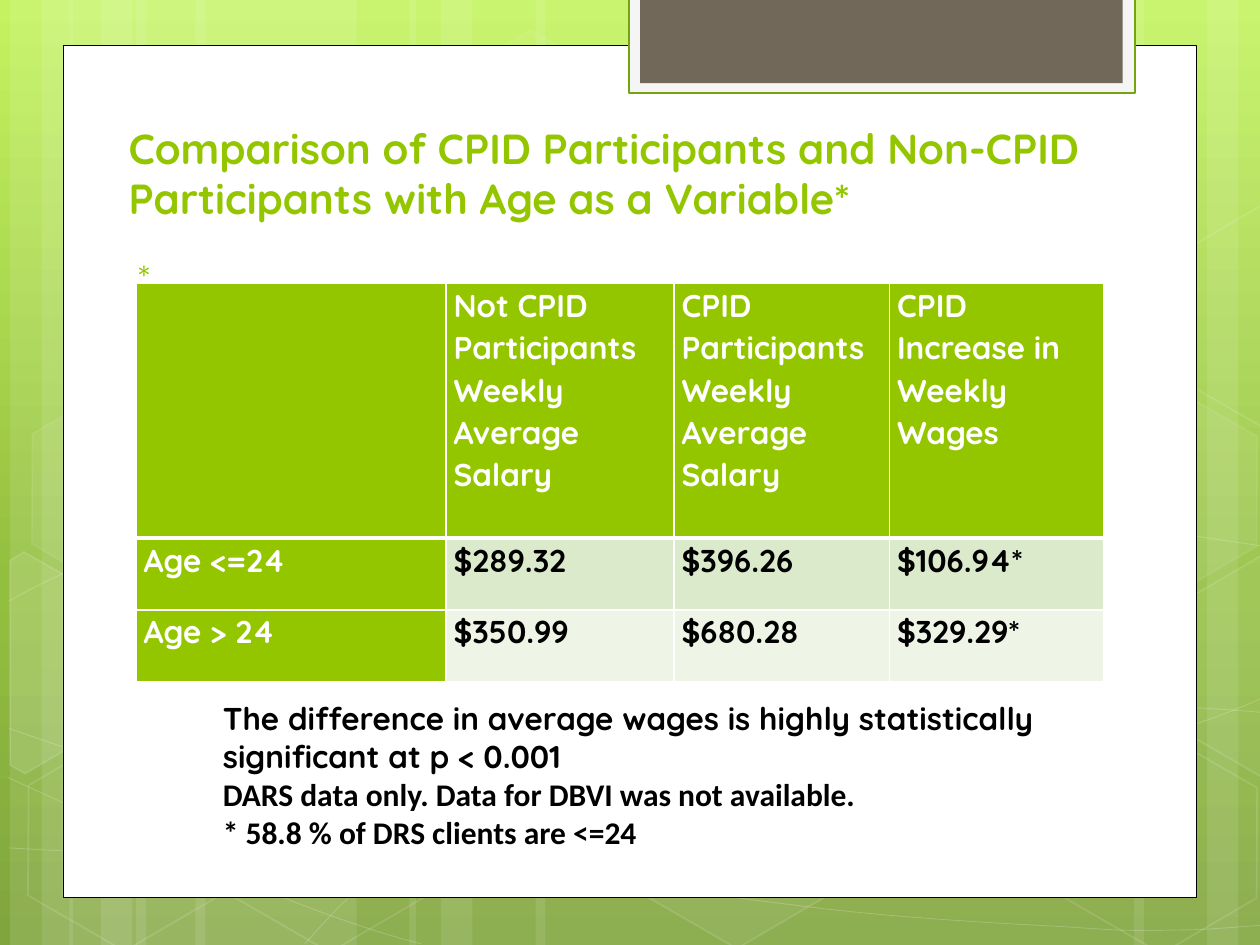
import math
from dataclasses import dataclass
from typing import Optional

import pptx
import pptx.dml.color
import pptx.enum.shapes
import pptx.enum.text
import pptx.oxml
import pptx.oxml.ns
import pptx.util
from pptx.util import Inches

COLORS = {
    "white": "FFFFFF", "black": "000000", "accent": "94C600",
    "tab_edge": "74A510", "tab_back": "F5F5F5", "tab": "71685A",
    "band1": "DCEACC", "band2": "EEF5E7",
    "bg_top": "C3F35F", "bg_mid": "93BF3F", "bg_bottom": "81A53E",
}
NS = pptx.oxml.ns.nsdecls("a")
RECT = pptx.enum.shapes.MSO_SHAPE.RECTANGLE
HEXAGON = pptx.enum.shapes.MSO_SHAPE.HEXAGON
TILT = 30


@dataclass
class Style:
    fill: Optional[str] = None
    fill_alpha: int = 100
    line: Optional[str] = None
    width: float = 1
    line_alpha: int = 100


@dataclass
class Hexagon:
    left: float
    top: float
    fill_alpha: int
    line_alpha: int


@dataclass
class Panel:
    left: float
    top: float
    width: float
    height: float
    style: Style


STRIPES = [(1.08, 1.75), (0.08, 0.5), (0.33, 0.83), (1.55, 1.75), (0.55, 0.5), (0.8, 0.83),
           (7.33, 1.75), (9.58, 0.5), (9, 0.83), (4.25, 3.08), (3.25, 0.5), (3.5, 0.83)]
CURVES = [
    [(0.07, 6.73), (0.61, 6.76), (1.15, 6.79), (1.9, 6.78), (2.65, 6.77), (3.58, 6.75), (4.58, 6.65),
     (5.58, 6.55), (7, 6.36), (7.92, 6.17), (8.83, 5.98), (9.77, 5.68), (10.07, 5.51)],
    [(0.07, 4.77), (0.36, 4.61), (0.65, 4.46), (1.21, 4.31), (1.78, 4.16), (2.59, 3.94), (3.47, 3.87),
     (4.36, 3.8), (5.44, 3.79), (6.54, 3.87), (7.64, 3.95), (9.47, 4.26), (10.07, 4.34)],
    [(0.06, 6.17), (1.27, 6.72), (2.47, 7.27), (3.34, 7.49)],
    [(0.07, 5.78), (0.38, 5.89), (0.7, 6), (1.28, 6.16), (1.86, 6.31), (2.73, 6.56), (3.57, 6.73),
     (4.4, 6.9), (5.45, 7.08), (6.28, 7.18), (7.11, 7.29), (8, 7.33), (8.53, 7.36),
     (9.05, 7.4), (9.19, 7.38), (9.45, 7.38), (9.71, 7.37), (9.89, 7.35), (10.07, 7.34)],
    [(2.42, 7.49), (2.6, 7.29), (2.78, 7.09), (3.02, 6.91), (3.26, 6.73), (3.6, 6.53), (3.88, 6.39),
     (4.16, 6.25), (4.33, 6.19), (4.7, 6.09), (5.06, 5.99), (5.73, 5.85), (6.08, 5.78),
     (6.44, 5.71), (6.49, 5.71), (6.8, 5.69), (7.11, 5.66), (7.6, 5.63), (7.94, 5.62),
     (8.29, 5.61), (8.86, 5.62), (8.86, 5.62), (9.08, 5.62), (9.31, 5.62), (9.53, 5.62),
     (9.71, 5.63), (9.88, 5.64), (10.06, 5.66)],
]
HEXAGONS = [
    Hexagon(3.34, 0.36, 4, 8), Hexagon(4.97, 5.89, 6, 12), Hexagon(0.11, 5.91, 0, 12),
    Hexagon(0.14, 3.12, 7, 8), Hexagon(1.74, 5.92, 0, 12), Hexagon(7.53, 4.53, 10, 12),
    Hexagon(8.34, 5.93, 0, 12), Hexagon(8.34, 3.14, 7, 8),
]
LEFT_CUT = [(0.08, 4.45), (0.19, 4.38), (0.96, 4.82), (0.95, 5.7), (0.2, 6.14), (0.08, 6.07)]
RIGHT_CUT = [(9.26, 4.85), (10.01, 4.41), (10.09, 4.46), (10.09, 6.13), (10.02, 6.17), (9.26, 5.73)]
CUT_HEXAGONS = [(LEFT_CUT, 10), (RIGHT_CUT, 4), ([(x, y - 2.78) for x, y in RIGHT_CUT], 0)]
PANELS = [
    Panel(0.5, 0.36, 9, 6.76, Style("white", line="black", width=0.5)),
    Panel(4.99, -0.02, 4.02, 0.76, Style("tab_back", line="tab_edge", width=1.25)),
    Panel(5.08, -0.02, 3.83, 0.68, Style("tab")),
]
TABLE = [
    ["", "Not CPID Participants\nWeekly Average Salary", "CPID Participants\nWeekly Average Salary",
     "CPID Increase in Weekly Wages"],
    ["Age <=24", "$289.32", "$396.26", "$106.94*"],
    ["Age > 24", "$350.99", "$680.28", "$329.29*"],
]


def rgb(name: str) -> pptx.dml.color.RGBColor:
    return pptx.dml.color.RGBColor.from_string(COLORS[name])


def paint(fill, color: Optional[str], alpha: int = 100) -> None:
    if color is None or alpha == 0:
        fill.background()
        return
    fill.solid()
    fill.fore_color.rgb = rgb(color)
    if alpha < 100:
        clr = fill._xPr.xpath("./a:solidFill/a:srgbClr")[0]
        clr.append(pptx.oxml.parse_xml(f'<a:alpha {NS} val="{alpha * 1000}"/>'))


def apply_style(sp, style: Style) -> None:
    sp.shadow.inherit = False
    paint(sp.fill, style.fill, style.fill_alpha)
    paint(sp.line.fill, style.line, style.line_alpha)
    if style.line:
        sp.line.width = pptx.util.Pt(style.width)


def add_preset(slide, kind, left: float, top: float, width: float, height: float, style: Style):
    sp = slide.shapes.add_shape(kind, Inches(left), Inches(top), Inches(width), Inches(height))
    apply_style(sp, style)
    return sp


def add_outline(slide, points: list, closed: bool, style: Style):
    pts = [(Inches(x), Inches(y)) for x, y in points]
    fb = slide.shapes.build_freeform(*pts[0])
    fb.add_line_segments(pts[1:], close=closed)
    sp = fb.convert_to_shape()
    apply_style(sp, style)
    return sp


def add_curve(slide, nodes: list, style: Style) -> None:
    sp = add_outline(slide, nodes, False, style)
    segments = sp.element.xpath(".//a:path/a:lnTo")
    for i in range(0, len(segments), 3):
        curve = pptx.oxml.parse_xml(f"<a:cubicBezTo {NS}/>")
        segments[i].addprevious(curve)
        for segment in segments[i:i + 3]:
            curve.append(segment[0])
            segment.getparent().remove(segment)


def turn(x: float, y: float, degrees: float) -> tuple[float, float]:
    c, s = math.cos(math.radians(degrees)), math.sin(math.radians(degrees))
    return x * c - y * s, x * s + y * c


def add_tilted_outline(slide, points: list, style: Style) -> None:
    sp = add_outline(slide, [turn(x, y, -TILT) for x, y in points], True, style)
    x, y = turn(sp.left + sp.width / 2, sp.top + sp.height / 2, TILT)
    sp.left, sp.top = round(x - sp.width / 2), round(y - sp.height / 2)
    sp.rotation = TILT


def format_paragraph(p, size: float, color: str, font: str = "Quicksand", bold: bool = True) -> None:
    p.alignment = pptx.enum.text.PP_ALIGN.LEFT
    for r in p.runs:
        r.font.size, r.font.name, r.font.bold = pptx.util.Pt(size), font, bold
        r.font.color.rgb = rgb(color)


def set_borders(cell, row: int) -> None:
    tcPr = cell._tc.get_or_add_tcPr()
    widths = {"lnL": 1, "lnR": 1, "lnT": 1, "lnB": 3 if row == 0 else 1}
    for i, (tag, width) in enumerate(widths.items()):
        tcPr.insert(i, pptx.oxml.parse_xml(
            f'<a:{tag} {NS} w="{width * 12700}"><a:solidFill>'
            f'<a:srgbClr val="{COLORS["white"]}"/></a:solidFill></a:{tag}>'))


def add_background(slide) -> None:
    slide.background.fill.gradient()
    slide.background.fill.gradient_angle = 270
    stops = slide.element.xpath(".//p:bg//a:gsLst")[0]
    for gs in list(stops):
        stops.remove(gs)
    for pos, name in ((0, "bg_top"), (62, "bg_mid"), (100, "bg_bottom")):
        stops.append(pptx.oxml.parse_xml(
            f'<a:gs {NS} pos="{pos * 1000}"><a:srgbClr val="{COLORS[name]}"/></a:gs>'))


def add_decoration(slide) -> None:
    for left, width in STRIPES:
        add_preset(slide, RECT, left, 0, width, 7.5, Style("white", 10))
    for nodes in CURVES:
        add_curve(slide, nodes, Style(line="white", width=0.5, line_alpha=20))
    for h in HEXAGONS:
        sp = add_preset(slide, HEXAGON, h.left, h.top, 1.75, 1.52,
                        Style("white", h.fill_alpha, "white", 1, h.line_alpha))
        sp.adjustments[0] = 0.285
        sp.rotation = TILT
    for points, alpha in CUT_HEXAGONS:
        add_tilted_outline(slide, points, Style("white", alpha, "white", 1, 12))
    for p in PANELS:
        add_preset(slide, RECT, p.left, p.top, p.width, p.height, p.style)


def add_title(slide) -> None:
    sp = slide.shapes.title
    sp.element.getparent().append(sp.element)
    sp.left, sp.top, sp.width, sp.height = Inches(0.92), Inches(0.92), Inches(8), Inches(0.91)
    tf = sp.text_frame
    tf.text = "Comparison of CPID Participants and Non-CPID Participants with Age as a Variable*"
    tf.auto_size = pptx.enum.text.MSO_AUTO_SIZE.NONE
    tf.vertical_anchor = pptx.enum.text.MSO_ANCHOR.TOP
    format_paragraph(tf.paragraphs[0], 24, "accent")


def add_text(slide, left: float, top: float, width: float, height: float, text: str):
    tf = slide.shapes.add_textbox(Inches(left), Inches(top), Inches(width), Inches(height)).text_frame
    tf.word_wrap = True
    tf.text = text
    return tf


def add_salary_table(slide) -> None:
    table = slide.shapes.add_table(3, 4, Inches(1.08), Inches(2.25), Inches(7.68), Inches(3.16)).table
    for col, width in zip(table.columns, (2.46, 1.81, 1.71, 1.7)):
        col.width = Inches(width)
    for row, height in zip(table.rows, (2.02, 0.57, 0.57)):
        row.height = Inches(height)
    for i, values in enumerate(TABLE):
        for j, value in enumerate(values):
            cell = table.cell(i, j)
            heading = i == 0 or j == 0
            cell.margin_left = cell.margin_right = Inches(0.06)
            cell.margin_top = cell.margin_bottom = 0
            paint(cell.fill, "accent" if heading else f"band{i}")
            set_borders(cell, i)
            cell.text_frame.text = value
            for p in cell.text_frame.paragraphs:
                p.line_spacing = 1.07
                format_paragraph(p, 18, "white" if heading else "black")


def main() -> None:
    prs = pptx.Presentation()
    prs.slide_width, prs.slide_height = Inches(10), Inches(7.5)
    slide = prs.slides.add_slide(prs.slide_layouts[5])
    add_background(slide)
    add_decoration(slide)
    tf = add_text(slide, 1, 1.17, 7.68, 1.25, "*")
    tf.vertical_anchor = pptx.enum.text.MSO_ANCHOR.BOTTOM
    format_paragraph(tf.paragraphs[0], 20.9, "accent", bold=False)
    add_salary_table(slide)
    add_title(slide)
    tf = add_text(slide, 1.67, 5.5, 7.02, 1.62,
                  "The difference in average wages is highly statistically significant at p < 0.001\n"
                  "DARS data only. Data for DBVI was not available.\n* 58.8 % of DRS clients are <=24")
    for p, font in zip(tf.paragraphs, ("Quicksand", "Calibri", "Calibri")):
        format_paragraph(p, 18, "black", font)
    prs.save("out.pptx")


if __name__ == "__main__":
    main()
